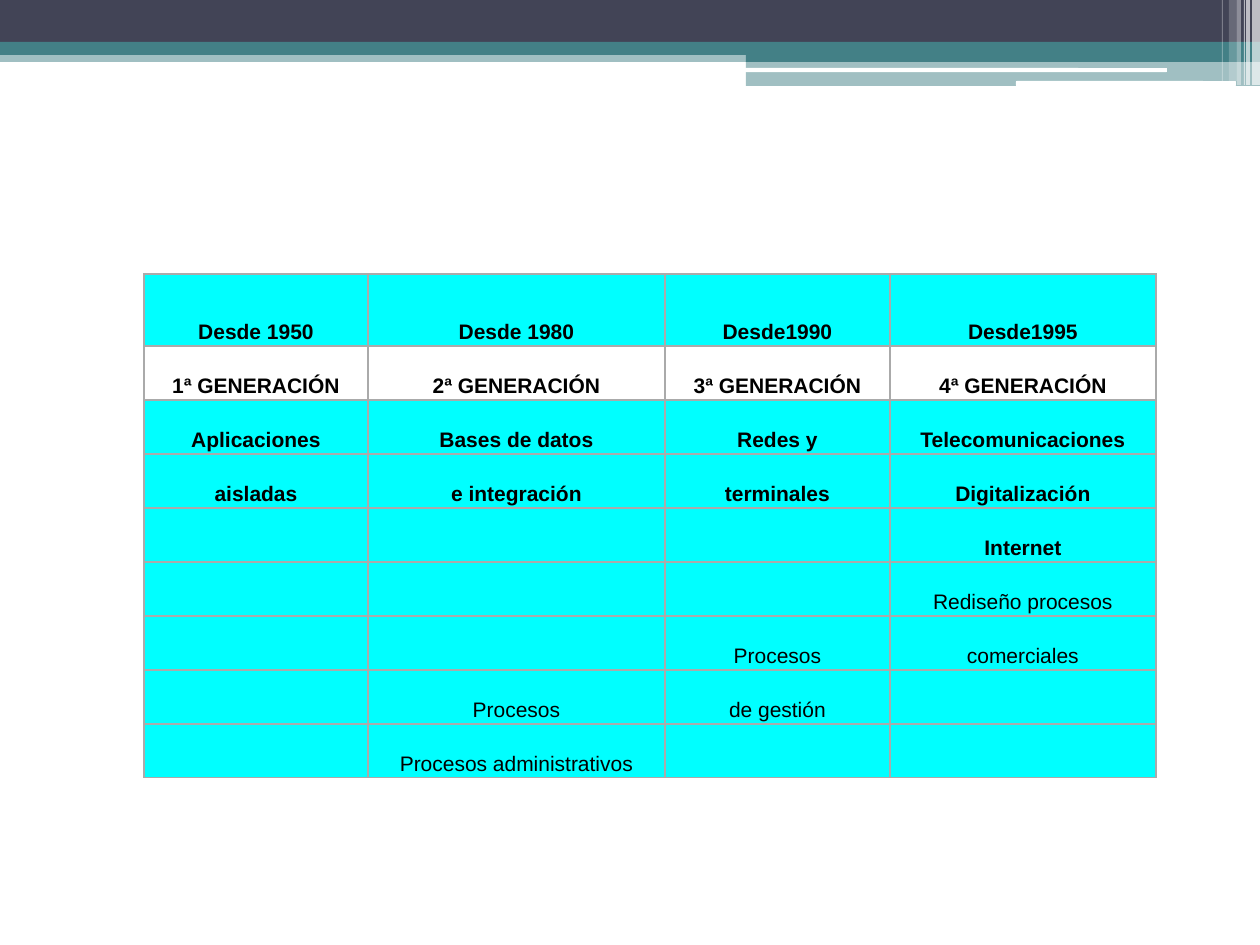
from dataclasses import dataclass

from lxml import etree
from pptx import Presentation
from pptx.dml.color import RGBColor
from pptx.enum.shapes import MSO_SHAPE
from pptx.enum.text import MSO_ANCHOR, PP_ALIGN
from pptx.oxml.ns import qn
from pptx.util import Emu, Pt

RECT = MSO_SHAPE.RECTANGLE
ROUND = MSO_SHAPE.ROUNDED_RECTANGLE
CENTER = PP_ALIGN.CENTER
BOTTOM = MSO_ANCHOR.BOTTOM
BLANK = 6
SCALE = 914400 / 126  # EMU in one px


@dataclass(frozen=True)
class Theme:
    dark: str = "424456"
    teal: str = "438086"
    white: str = "FFFFFF"
    cyan: str = "00FFFF"
    line: str = "AAAAAA"
    ink: str = "000000"
    font: str = "Arial"
    size: float = 12
    gap: float = 6.8
    lead: float = 1.15
    edge: float = 1


@dataclass(frozen=True)
class Bar:
    left: int
    top: int
    width: int
    height: int
    color: str
    alpha: int = 100
    kind: MSO_SHAPE = RECT


THEME = Theme()

# Header bands, from back to front
BANDS = [
    Bar(0, 50, 1260, 12, THEME.teal, 50),
    Bar(0, 0, 1260, 42, THEME.dark),
    Bar(0, 42, 1260, 13, THEME.teal),
    Bar(746, 49, 514, 13, THEME.teal),
    Bar(746, 61, 514, 25, THEME.teal, 50),
    Bar(745, 68, 422, 4, THEME.white, kind=ROUND),
    Bar(1016, 81, 220, 5, THEME.white, kind=ROUND),
]

# Stripes in the corner: left, width, height, alpha
STRIPES = [
    Bar(left, 0, width, height, THEME.white, alpha)
    for left, width, height, alpha in [
        (1252, 8, 85, 65), (1246, 4, 85, 65), (1244, 1, 85, 60),
        (1237, 4, 85, 40), (1229, 8, 81, 20), (1222, 1, 81, 30),
    ]
]

LEFT, TOP = 144, 274
COLS = [224, 297, 225, 266]
HEAD, ROW = 72, 54
PLAIN = 1  # row with a white fill
BOLD = 5   # rows in bold, from the top
CELLS = [
    ["Desde 1950", "Desde 1980", "Desde1990", "Desde1995"],
    ["1ª GENERACIÓN", "2ª GENERACIÓN", "3ª GENERACIÓN", "4ª GENERACIÓN"],
    ["Aplicaciones", "Bases de datos", "Redes y", "Telecomunicaciones"],
    ["aisladas", "e integración", "terminales", "Digitalización"],
    ["", "", "", "Internet"],
    ["", "", "", "Rediseño procesos"],
    ["", "", "Procesos", "comerciales"],
    ["", "Procesos", "de gestión", ""],
    ["", "Procesos administrativos", "", ""],
]


def px(count: int) -> Emu:
    return Emu(round(count * SCALE))


def paint(fill, color: str) -> None:
    fill.solid()
    fill.fore_color.rgb = RGBColor.from_string(color)


def draw_bar(slide, bar: Bar) -> None:
    shape = slide.shapes.add_shape(
        bar.kind, px(bar.left), px(bar.top), px(bar.width), px(bar.height))
    shape.shadow.inherit = False
    shape.line.fill.background()
    paint(shape.fill, bar.color)
    if bar.alpha < 100:
        color = shape.fill._xPr.find(qn("a:solidFill"))[0]
        etree.SubElement(color, qn("a:alpha"), val=str(bar.alpha * 1000))


def add_edges(cell) -> None:
    props = cell._tc.get_or_add_tcPr()
    for spot, side in enumerate(("lnL", "lnR", "lnT", "lnB")):
        edge = etree.Element(qn(f"a:{side}"), w=str(Pt(THEME.edge)))
        fill = etree.SubElement(edge, qn("a:solidFill"))
        etree.SubElement(fill, qn("a:srgbClr"), val=THEME.line)
        props.insert(spot, edge)


def fill_cell(cell, text: str, color: str, bold: bool) -> None:
    paint(cell.fill, color)
    add_edges(cell)
    cell.vertical_anchor = BOTTOM
    cell.margin_left = cell.margin_right = px(2)
    cell.margin_top = cell.margin_bottom = px(2)
    if not text:
        return
    cell.text = text
    para = cell.text_frame.paragraphs[0]
    para.alignment = CENTER
    para.line_spacing = THEME.lead
    para.space_before = para.space_after = Pt(THEME.gap)
    font = para.font
    font.name, font.size, font.bold = THEME.font, Pt(THEME.size), bold
    font.color.rgb = RGBColor.from_string(THEME.ink)


def draw_table(slide) -> None:
    rows = [HEAD] + [ROW] * (len(CELLS) - 1)
    table = slide.shapes.add_table(
        len(rows), len(COLS), px(LEFT), px(TOP),
        px(sum(COLS)), px(sum(rows))).table
    table.first_row = table.horz_banding = False
    for col, width in zip(table.columns, COLS):
        col.width = px(width)
    for r, (height, texts) in enumerate(zip(rows, CELLS)):
        table.rows[r].height = px(height)
        color = THEME.white if r == PLAIN else THEME.cyan
        for c, text in enumerate(texts):
            fill_cell(table.cell(r, c), text, color, r < BOLD)


def main() -> None:
    deck = Presentation()
    deck.slide_width, deck.slide_height = px(1260), px(945)
    slide = deck.slides.add_slide(deck.slide_layouts[BLANK])
    for bar in BANDS + STRIPES:
        draw_bar(slide, bar)
    draw_table(slide)
    deck.save("out.pptx")


if __name__ == "__main__":
    main()
